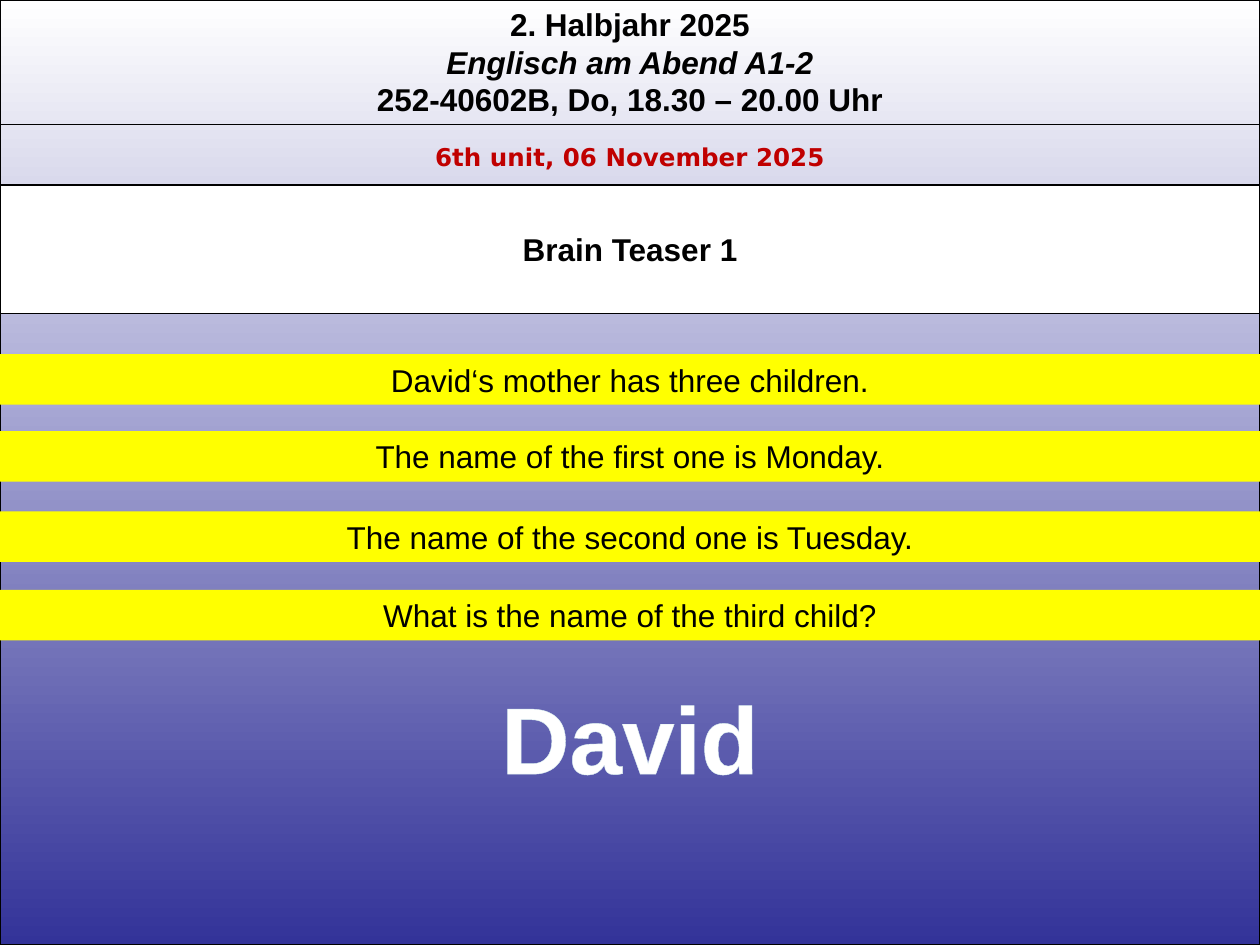
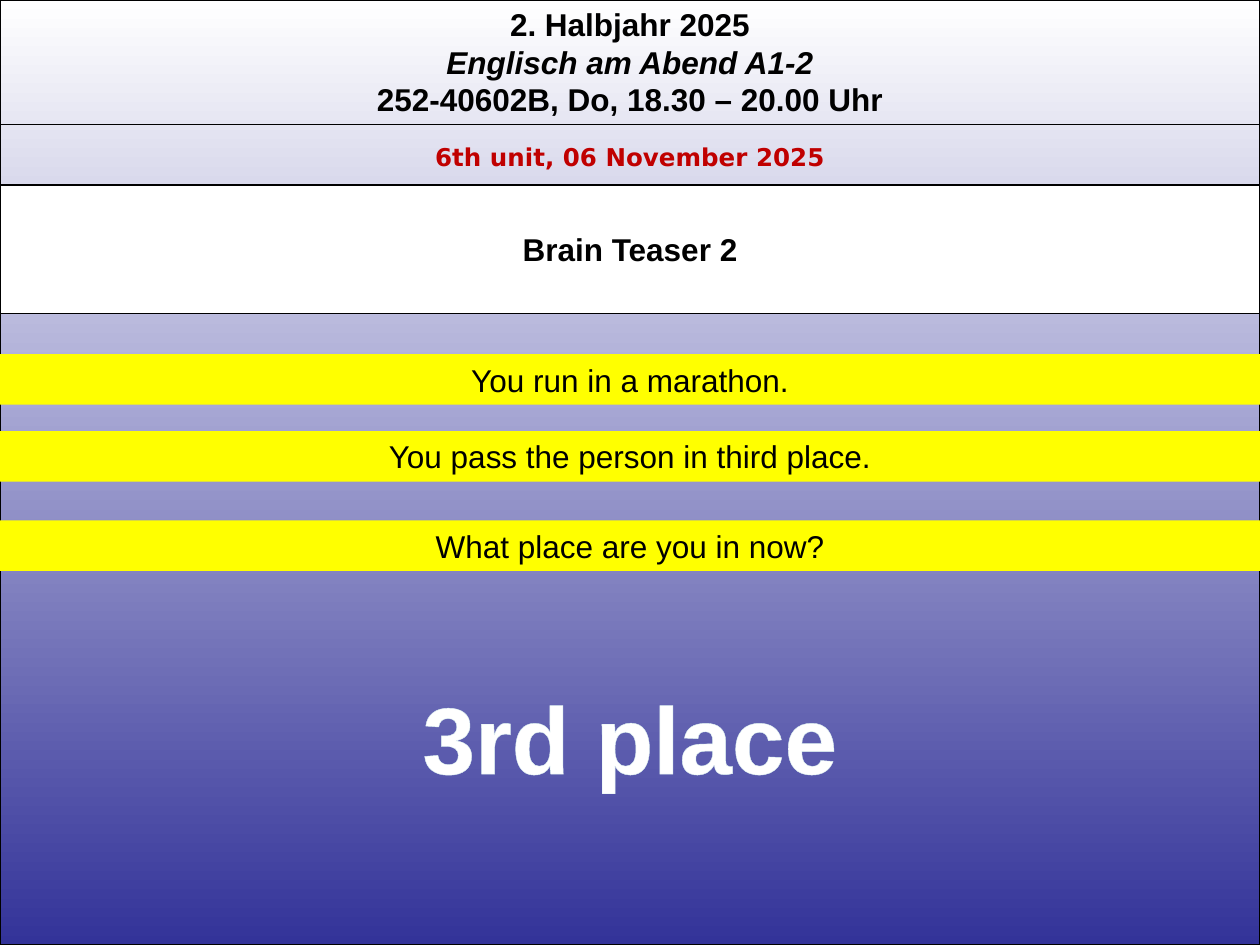
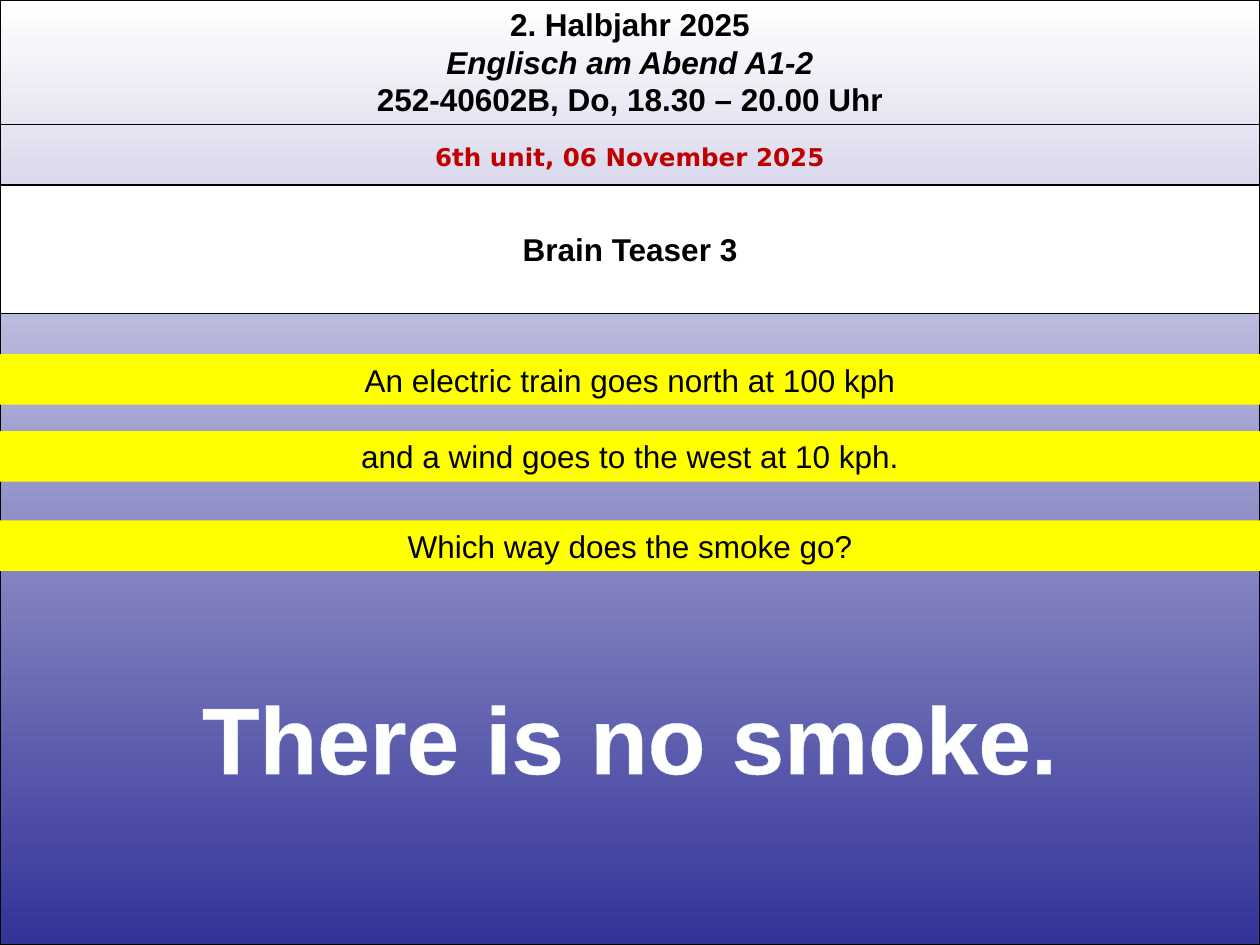
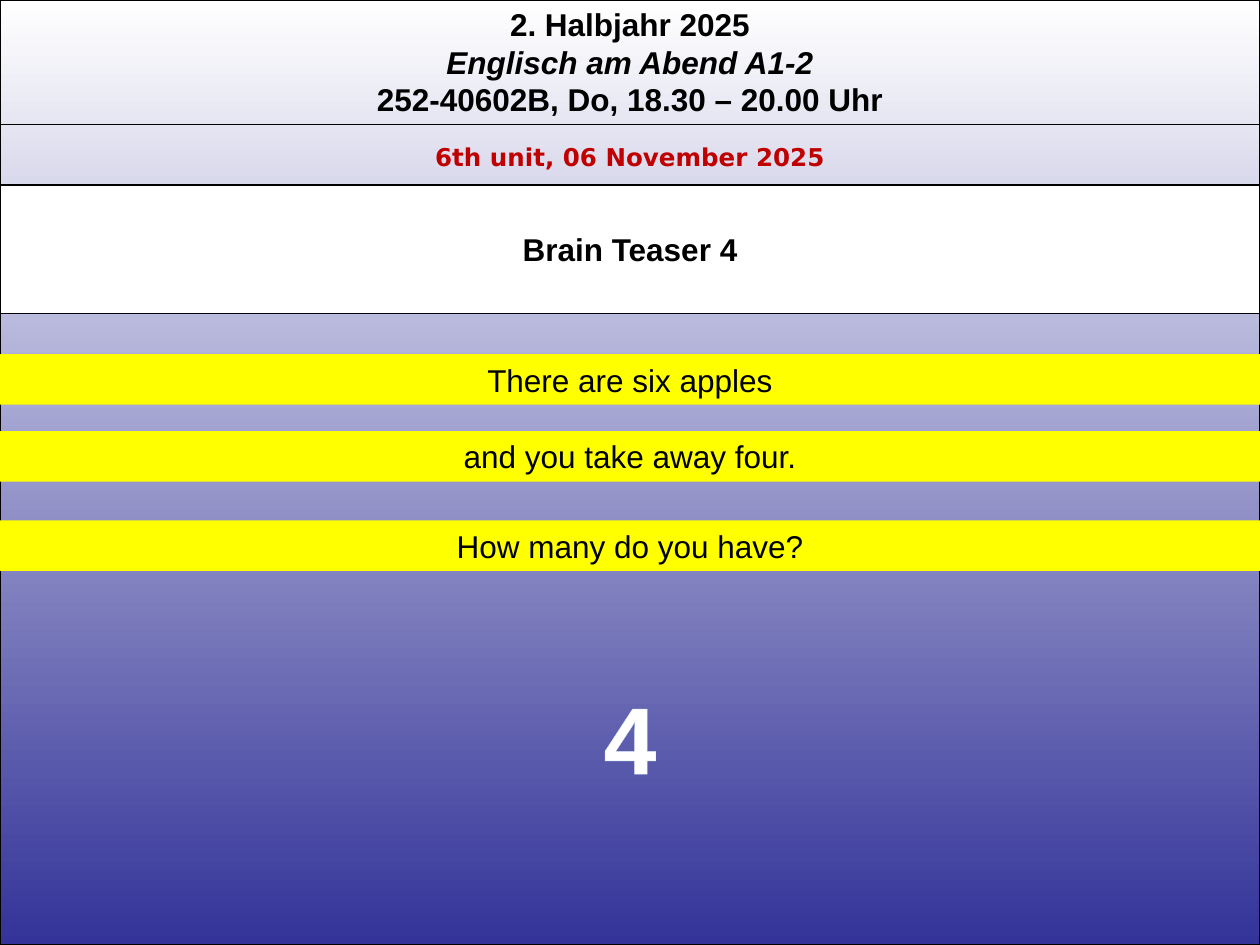
"""Build four brain teaser slides for an evening English course."""
import lxml.etree
import pptx
import pptx.dml.color
import pptx.enum.shapes
import pptx.enum.text
import pptx.oxml.ns
import pptx.util

HEAD = [
    ("2. Halbjahr 2025", False),
    ("Englisch am Abend A1-2", True),
    ("252-40602B, Do, 18.30 – 20.00 Uhr", False),
]
DATE = "6th unit, 06 November 2025"
QUIZ = [
    (["David‘s mother has three children.",
      "The name of the first one is Monday.",
      "The name of the second one is Tuesday.",
      "What is the name of the third child?"], "David", 5.74),
    (["You run in a marathon.",
      "You pass the person in third place.",
      "What place are you in now?"], "3rd place", 8.97),
    (["An electric train goes north at 100 kph",
      "and a wind goes to the west at 10 kph.",
      "Which way does the smoke go?"], "There is no smoke.", 25.4),
    (["There are six apples",
      "and you take away four.",
      "How many do you have?"], "4", 1.57),
]
WIDE, HIGH = 25.4, 19.05
TOPS = {3: (7.14, 8.69, 10.49), 4: (7.14, 8.69, 10.31, 11.89)}
BLACK, WHITE, NAVY = "000000", "FFFFFF", "333399"
YELLOW, RED, PALE = "FFFF00", "C00000", "DAEDEF"

Cm, Pt = pptx.util.Cm, pptx.util.Pt
FIT = pptx.enum.text.MSO_AUTO_SIZE
RECT = pptx.enum.shapes.MSO_SHAPE.RECTANGLE
qn = pptx.oxml.ns.qn


def paint(item, code):
    item.rgb = pptx.dml.color.RGBColor.from_string(code)


def fill(shape, code):
    shape.fill.solid()
    paint(shape.fill.fore_color, code)


def edge(shape):
    paint(shape.line.color, BLACK)
    shape.line.width = Pt(0.75)


def place(*size):
    return [Cm(x) for x in size]


def write(shape, rows, size=18, color=BLACK, bold=True, font="Arial",
          grow=True, wrap=True):
    frame = shape.text_frame
    frame.word_wrap = wrap
    frame.auto_size = FIT.SHAPE_TO_FIT_TEXT if grow else FIT.NONE
    frame.vertical_anchor = pptx.enum.text.MSO_ANCHOR.MIDDLE
    for i, (text, slant) in enumerate(rows):
        para = frame.add_paragraph() if i else frame.paragraphs[0]
        para.alignment = pptx.enum.text.PP_ALIGN.CENTER
        run = para.add_run()
        run.text = text
        run.font.name, run.font.size = font, Pt(size)
        run.font.bold, run.font.italic = bold, slant
        paint(run.font.color, color)
    return run


def box(slide, size):
    shape = slide.shapes.add_shape(RECT, *place(*size))
    shape.shadow.inherit = False
    return shape


def dress(layout, slide):
    """Give the layout its gradient, course heading and rule."""
    for old in list(layout.placeholders)[2:]:
        layout.shapes.element.remove(old.element)
    back = box(slide, (0, 0, WIDE, HIGH))
    back.fill.gradient()
    back.fill.gradient_angle = 270
    for stop, code in zip(back.fill.gradient_stops, (WHITE, NAVY)):
        paint(stop.color, code)
    edge(back)
    head = slide.shapes.add_textbox(*place(0, -0.03, WIDE, 2.54))
    write(head, HEAD)
    rule = slide.shapes.add_connector(
        pptx.enum.shapes.MSO_CONNECTOR.STRAIGHT, *place(0, 2.51, WIDE, 2.51))
    edge(rule)
    lxml.etree.SubElement(rule.element.spPr, qn("a:effectLst"))
    for i, shape in enumerate((back, head, rule)):
        layout.shapes.element.insert(2 + i, shape.element)


def trim(run):
    """Outline the letters of a run."""
    line = lxml.etree.Element(qn("a:ln"), w=str(Pt(0.8)))
    solid = lxml.etree.SubElement(line, qn("a:solidFill"))
    lxml.etree.SubElement(solid, qn("a:srgbClr"), val=PALE)
    run.font.fill
    run.font._element.insert(0, line) if hasattr(run.font, "_element") \
        else run._r.get_or_add_rPr().insert(0, line)


def teaser(slide, num, clues, reply, width):
    title, sub = slide.placeholders
    slide.shapes.element.remove(sub.element)
    title.left, title.top, title.width, title.height = place(
        0, 3.73, WIDE, 2.59)
    fill(title, WHITE)
    edge(title)
    write(title, [(f"Brain Teaser {num}", False)], grow=False)
    date = slide.shapes.add_textbox(*place(0, 2.72, WIDE, 0.86))
    write(date, [(DATE, False)], 14, RED, font="DejaVu Sans")
    for clue, top in zip(clues, TOPS[len(clues)]):
        band = box(slide, (0, top, WIDE, 1.02))
        fill(band, YELLOW)
        band.line.fill.background()
        write(band, [(clue, False)], bold=False)
    spot = slide.shapes.add_textbox(
        *place((WIDE - width) / 2, 13.56, width, 2.57))
    trim(write(spot, [(reply, False)], 54, WHITE, wrap=width == WIDE))


def main():
    deck = pptx.Presentation()
    deck.slide_width, deck.slide_height = place(WIDE, HIGH)
    layout = deck.slide_layouts[0]
    for num, quiz in enumerate(QUIZ, 1):
        slide = deck.slides.add_slide(layout)
        if num == 1:
            dress(layout, slide)
        teaser(slide, num, *quiz)
    deck.save("out.pptx")


if __name__ == "__main__":
    main()
